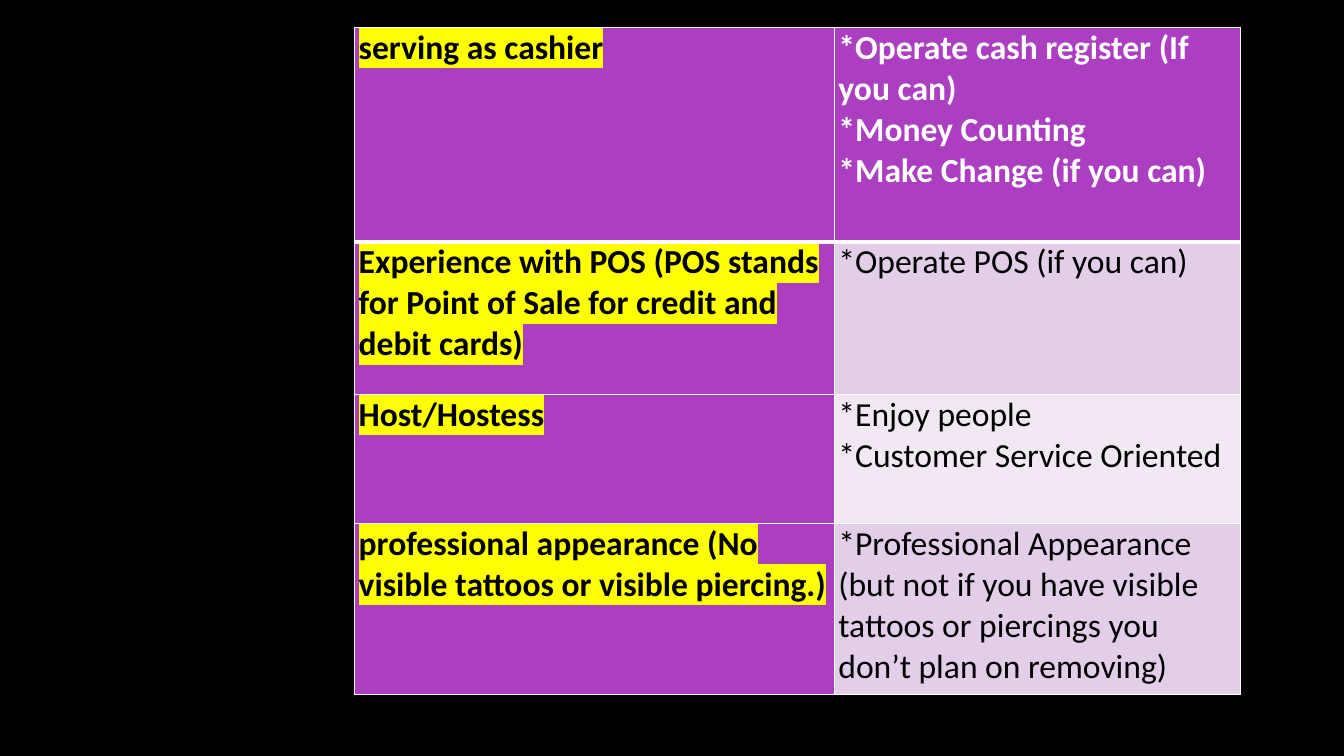
from pptx import Presentation
from pptx.dml.color import RGBColor as Color
from pptx.oxml.ns import qn
from pptx.util import Cm, Pt
from lxml.etree import SubElement

BLACK = Color(0x00, 0x00, 0x00)
WHITE = Color(0xFF, 0xFF, 0xFF)
YELLOW = Color(0xFF, 0xFF, 0x00)
PURPLE = Color(0xAC, 0x3E, 0xC1)
LILAC = Color(0xE3, 0xCE, 0xE9)
PALE_LILAC = Color(0xF1, 0xE8, 0xF4)

COLUMN_WIDTHS = [12.09, 10.24]
ROW_HEIGHTS = [5.41, 3.84, 3.25, 4.32]
# Requirement, matching skills, fill and text colour of the skills
JOB_ROWS = [
    ("serving as cashier",
     ["*Operate cash register (If you can)", "*Money Counting",
      "*Make Change (if you can)"], PURPLE, WHITE),
    ("Experience with POS (POS stands for Point of Sale for credit and debit cards)",
     ["*Operate POS (if you can)"], LILAC, BLACK),
    ("Host/Hostess",
     ["*Enjoy people", "*Customer Service Oriented"], PALE_LILAC, BLACK),
    ("professional appearance (No visible tattoos or visible piercing.)",
     ["*Professional Appearance (but not if you have visible tattoos or "
      "piercings you don’t plan on removing)"], LILAC, BLACK),
]


def add_text(para, text, color=BLACK, bold=False, highlight=None):
    span = para.add_run()
    span.text = text
    font = span.font
    font.name, font.size, font.bold = "Calibri", Pt(24), bold
    font.color.rgb = color
    if highlight is not None:
        properties = span._r.get_or_add_rPr()
        marker = SubElement(properties, qn("a:highlight"))
        SubElement(marker, qn("a:srgbClr"), val=str(highlight))
        # The highlight has to follow the text fill
        properties.find(qn("a:solidFill")).addnext(marker)


def add_borders(cell, top=1, bottom=1):
    properties = cell._tc.get_or_add_tcPr()
    for side, width in (("L", 1), ("R", 1), ("T", top), ("B", bottom)):
        line = SubElement(properties, qn(f"a:ln{side}"), w=str(Pt(width)))
        fill = SubElement(line, qn("a:solidFill"))
        SubElement(fill, qn("a:srgbClr"), val=str(WHITE))


def fill_cell(cell, lines, fill, **text_format):
    cell.margin_left = cell.margin_right = Cm(0.1)
    cell.margin_top = cell.margin_bottom = 0
    cell.fill.solid()
    cell.fill.fore_color.rgb = fill
    frame = cell.text_frame
    for index, line in enumerate(lines):
        para = frame.add_paragraph() if index else frame.paragraphs[0]
        add_text(para, line, **text_format)


def add_job_table(page, left, top, width, height):
    table = page.shapes.add_table(len(JOB_ROWS), len(COLUMN_WIDTHS),
                                  left, top, width, height).table
    table.first_row = table.horz_banding = False
    for column, size in zip(table.columns, COLUMN_WIDTHS):
        column.width = int(width * size / sum(COLUMN_WIDTHS))
    for row, size in zip(table.rows, ROW_HEIGHTS):
        row.height = int(height * size / sum(ROW_HEIGHTS))

    for index, (requirement, skills, fill, color) in enumerate(JOB_ROWS):
        # A thick rule separates the first row from the rest
        for cell in table.rows[index].cells:
            add_borders(cell, top=3 if index == 1 else 1,
                        bottom=3 if index == 0 else 1)
        fill_cell(table.cell(index, 0), [requirement], PURPLE,
                  bold=True, highlight=YELLOW)
        fill_cell(table.cell(index, 1), skills, fill,
                  color=color, bold=index == 0)


def main():
    deck = Presentation()
    deck.slide_width, deck.slide_height = Cm(33.87), Cm(19.05)
    page = deck.slides.add_slide(deck.slide_layouts[6])
    page.background.fill.solid()
    page.background.fill.fore_color.rgb = BLACK
    add_job_table(page, Cm(8.94), Cm(0.69),
                  Cm(sum(COLUMN_WIDTHS)), Cm(sum(ROW_HEIGHTS)))
    deck.save("out.pptx")


if __name__ == "__main__":
    main()
